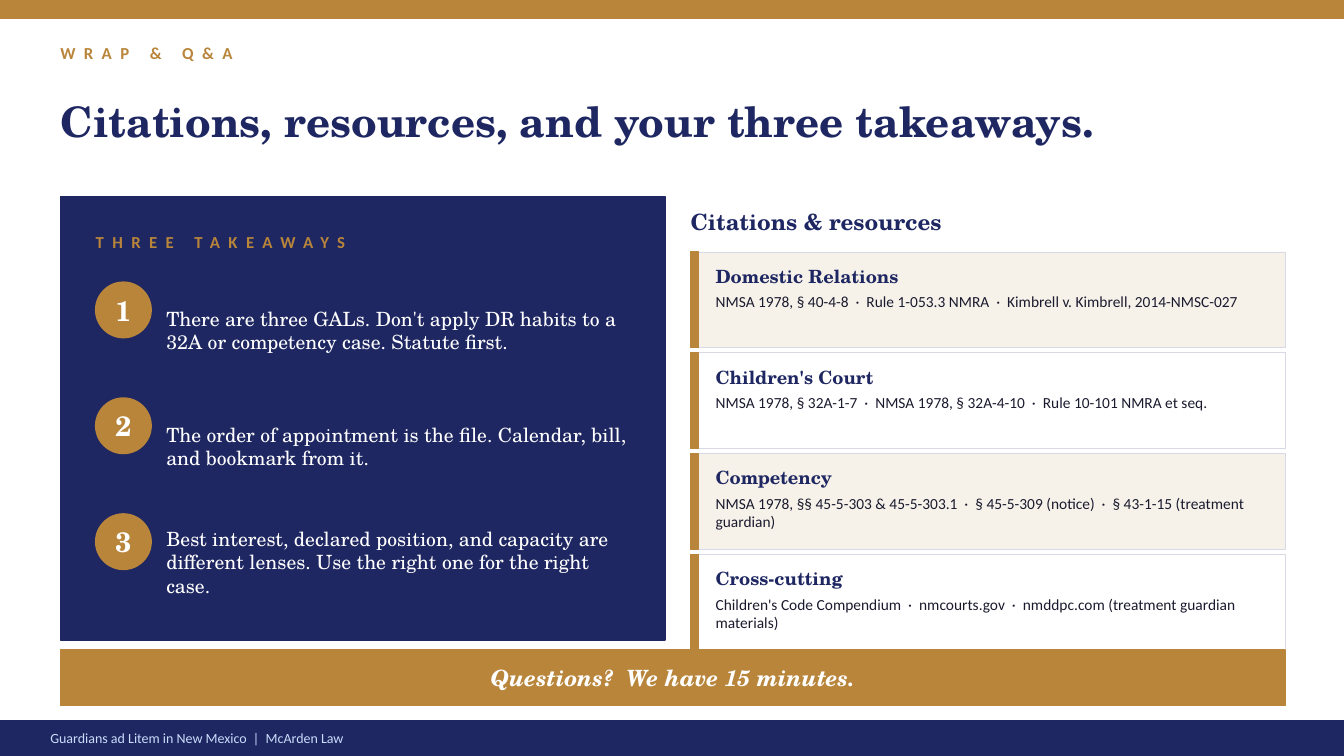
from dataclasses import dataclass

from pptx import Presentation
from pptx.dml.color import RGBColor
from pptx.enum.shapes import MSO_SHAPE
from pptx.enum.text import MSO_ANCHOR, MSO_AUTO_SIZE, PP_ALIGN
from pptx.shapes.autoshape import Shape
from pptx.slide import Slide
from pptx.util import Cm, Pt

NAVY, GOLD, CREAM, WHITE = "1E2761", "B8853B", "F6F2EA", "FFFFFF"
RULE, INK, PALE = "D9D9E5", "1A1A2E", "CADCFC"
SERIF, SANS = "TeX Gyre Schola", "Calibri"
LEFT, RIGHT = 1.52, 17.4


@dataclass(frozen=True)
class Box:
    x: float
    y: float
    w: float
    h: float


@dataclass(frozen=True)
class Card:
    head: str
    body: str
    fill: str


POINTS = (
    "There are three GALs. Don't apply DR habits to a 32A or competency case. Statute first.",
    "The order of appointment is the file. Calendar, bill, and bookmark from it.",
    "Best interest, declared position, and capacity are different lenses. "
    "Use the right one for the right case.",
)
CARDS = (
    Card("Domestic Relations",
         "NMSA 1978, § 40-4-8  ·  Rule 1-053.3 NMRA  ·  Kimbrell v. Kimbrell, 2014-NMSC-027",
         CREAM),
    Card("Children's Court",
         "NMSA 1978, § 32A-1-7  ·  NMSA 1978, § 32A-4-10  ·  Rule 10-101 NMRA et seq.",
         WHITE),
    Card("Competency",
         "NMSA 1978, §§ 45-5-303 & 45-5-303.1  ·  § 45-5-309 (notice)  ·  "
         "§ 43-1-15 (treatment guardian)",
         CREAM),
    Card("Cross-cutting",
         "Children's Code Compendium  ·  nmcourts.gov  ·  "
         "nmddpc.com (treatment guardian materials)",
         WHITE),
)


def paint(code: str) -> RGBColor:
    return RGBColor.from_string(code)


def write(shape: Shape, text: str, *, size: float, color: str, font: str = SERIF,
          bold: bool = False, italic: bool = False, track: int = 0, inset: float = 0,
          align: PP_ALIGN = PP_ALIGN.LEFT, anchor: MSO_ANCHOR = MSO_ANCHOR.MIDDLE) -> None:
    frame = shape.text_frame
    frame.word_wrap = True
    frame.auto_size = MSO_AUTO_SIZE.NONE
    frame.vertical_anchor = anchor
    frame.margin_left = Cm(inset)
    frame.margin_top = frame.margin_right = frame.margin_bottom = 0
    para = frame.paragraphs[0]
    para.alignment = align
    run = para.add_run()
    run.text = text
    run.font.name = font
    run.font.size = Pt(size)
    run.font.bold = bold
    run.font.italic = italic
    run.font.color.rgb = paint(color)
    if track:
        run._r.get_or_add_rPr().set("spc", str(track * 100))


def place(shape: Shape, box: Box) -> None:
    shape.left, shape.top = Cm(box.x), Cm(box.y)
    shape.width, shape.height = Cm(box.w), Cm(box.h)


def label(slide: Slide, box: Box, text: str, **style) -> None:
    shape = slide.shapes.add_textbox(0, 0, 0, 0)
    place(shape, box)
    write(shape, text, **style)


def block(slide: Slide, box: Box, fill: str, line: str = "", width: float = 1,
          kind: MSO_SHAPE = MSO_SHAPE.RECTANGLE) -> Shape:
    shape = slide.shapes.add_shape(kind, 0, 0, 0, 0)
    place(shape, box)
    shape.shadow.inherit = False
    shape.fill.solid()
    shape.fill.fore_color.rgb = paint(fill)
    shape.line.color.rgb = paint(line or fill)
    shape.line.width = Pt(width)
    return shape


def draw_point(slide: Slide, index: int, text: str) -> None:
    top = 7.11 + index * 2.92
    badge = block(slide, Box(2.41, top, 1.4, 1.4), GOLD, kind=MSO_SHAPE.OVAL)
    write(badge, str(index + 1), size=20, color=WHITE, bold=True, align=PP_ALIGN.CENTER)
    label(slide, Box(4.19, top - 0.12, 11.68, 2.67), text, size=14, color=WHITE)


def draw_card(slide: Slide, index: int, card: Card) -> None:
    top = 6.35 + index * 2.54
    block(slide, Box(RIGHT, top, 14.99, 2.41), card.fill, RULE, 0.5)
    block(slide, Box(RIGHT, top, 0.2, 2.41), GOLD)
    label(slide, Box(18.03, top + 0.2, 13.97, 0.81), card.head,
          size=13, color=NAVY, bold=True)
    label(slide, Box(18.03, top + 1.02, 13.97, 1.4), card.body,
          size=11, color=INK, font=SANS, anchor=MSO_ANCHOR.TOP)


def main() -> None:
    deck = Presentation()
    deck.slide_width, deck.slide_height = Cm(33.86), Cm(19.05)
    slide = deck.slides.add_slide(deck.slide_layouts[5])
    kicker = dict(size=12, color=GOLD, font=SANS, bold=True, track=6)

    block(slide, Box(0, 0, 33.86, 0.46), GOLD)
    label(slide, Box(LEFT, 0.89, 30.48, 0.89), "WRAP & Q&A", **kicker)
    title = slide.shapes.title
    place(title, Box(LEFT, 1.78, 30.48, 2.54))
    write(title, "Citations, resources, and your three takeaways.",
          size=30, color=NAVY, bold=True)

    block(slide, Box(LEFT, 4.95, 15.24, 11.18), NAVY)
    label(slide, Box(2.41, 5.59, 13.46, 1.02), "THREE TAKEAWAYS", **kicker)
    for index, text in enumerate(POINTS):
        draw_point(slide, index, text)

    label(slide, Box(RIGHT, 4.95, 14.99, 1.27), "Citations & resources",
          size=16, color=NAVY, bold=True)
    for index, card in enumerate(CARDS):
        draw_card(slide, index, card)

    banner = block(slide, Box(LEFT, 16.38, 30.86, 1.4), GOLD)
    write(banner, "Questions?  We have 15 minutes.", size=16, color=WHITE,
          bold=True, italic=True, align=PP_ALIGN.CENTER)
    footer = block(slide, Box(0, 18.16, 33.86, 0.89), NAVY)
    write(footer, "Guardians ad Litem in New Mexico  |  McArden Law",
          size=10, color=PALE, font=SANS, inset=1.27)
    deck.save("out.pptx")


if __name__ == "__main__":
    main()
